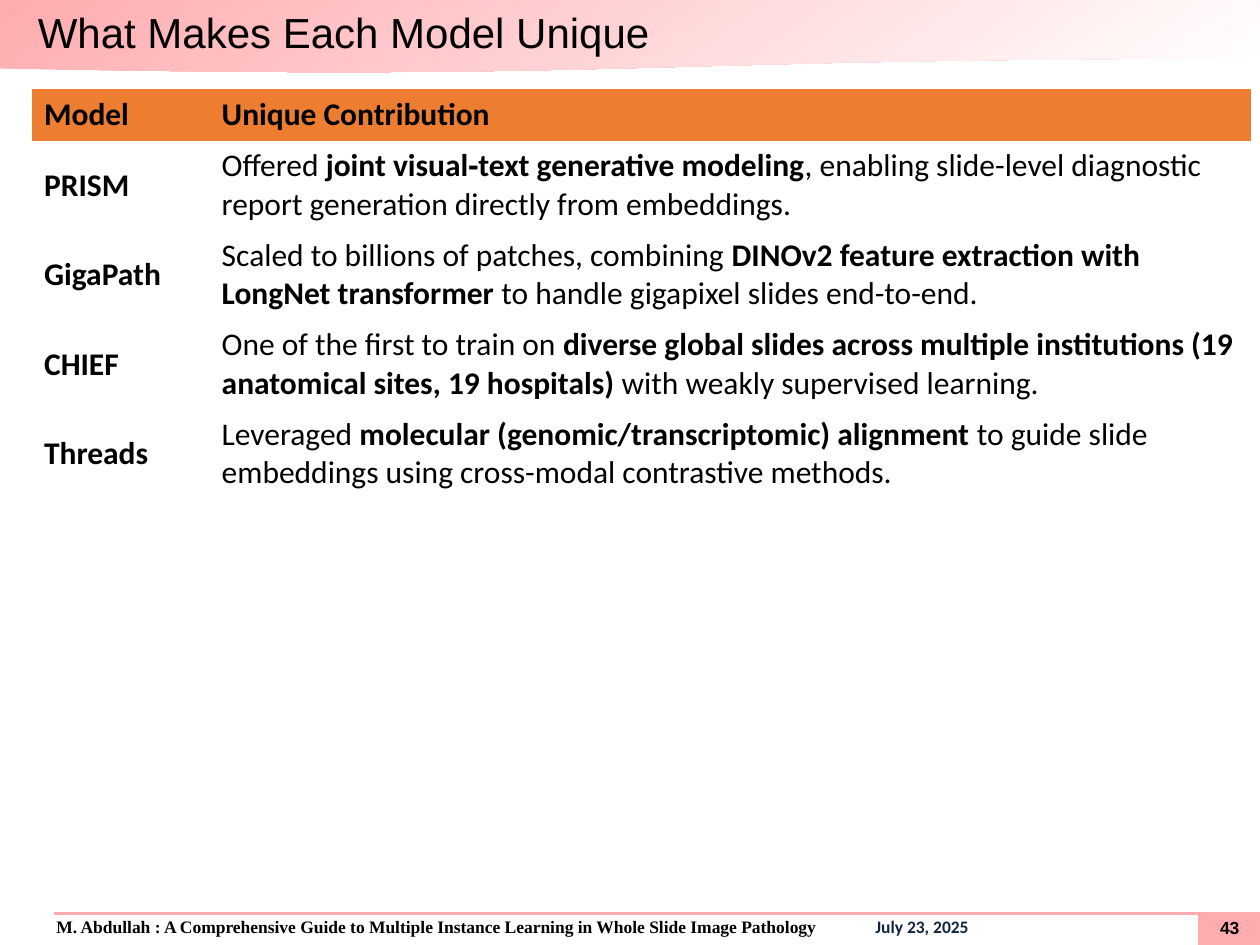
from dataclasses import dataclass

from lxml import etree
from pptx import Presentation
from pptx import util as u
from pptx.dml.color import RGBColor
from pptx.enum import shapes, text
from pptx.oxml.ns import qn

COLS, ROWS = 100, 75
W, H = u.Inches(10), u.Inches(7.5)
PINK, WHITE, BLACK, ORANGE, NAVY = "FFACAF", "FFFFFF", "000000", "ED7D31", "0F243E"
PLAIN_TABLE = "{2D5ABB26-0587-4C30-8999-92F81FD0307C}"


@dataclass
class Box:
    col: float
    row: float
    cols: float
    rows: float

    def emu(self) -> tuple[int, int, int, int]:
        return across(self.col), down(self.row), across(self.cols), down(self.rows)


@dataclass
class Model:
    name: str
    before: str
    key: str
    after: str


MODELS = [
    Model("PRISM", "Offered ", "joint visual‑text generative modeling",
          ", enabling slide-level diagnostic report generation directly from embeddings."),
    Model("GigaPath", "Scaled to billions of patches, combining ",
          "DINOv2 feature extraction with LongNet transformer",
          " to handle gigapixel slides end-to-end."),
    Model("CHIEF", "One of the first to train on ",
          "diverse global slides across multiple institutions (19 anatomical sites, 19 hospitals)",
          " with weakly supervised learning."),
    Model("Threads", "Leveraged ", "molecular (genomic/transcriptomic) alignment",
          " to guide slide embeddings using cross-modal contrastive methods."),
]


def across(cols: float) -> int:
    return round(W * cols / COLS)


def down(rows: float) -> int:
    return round(H * rows / ROWS)


def rgb(value: str) -> RGBColor:
    return RGBColor.from_string(value)


def style(font, size: float, name: str, bold: bool = False, color: str = BLACK) -> None:
    font.size, font.name, font.bold = u.Pt(size), name, bold
    font.color.rgb = rgb(color)


def add_run(p, words: str, size: float, name: str, bold: bool = False, color: str = BLACK) -> None:
    r = p.add_run()
    r.text = words
    style(r.font, size, name, bold, color)


def set_insets(tf, left: float = 0) -> None:
    tf.margin_left = across(left)
    tf.margin_top = tf.margin_right = tf.margin_bottom = 0


def add_block(s, kind, box: Box):
    sp = s.shapes.add_shape(kind, *box.emu())
    sp.shadow.inherit = False
    sp.line.fill.background()
    return sp


def add_band(s) -> None:
    sp = add_block(s, shapes.MSO_SHAPE.FLOWCHART_DOCUMENT, Box(0, 0, 100.1, 5.8))
    sp.fill.gradient()
    sp.fill.gradient_angle = 305
    for stop, color, position in zip(sp.fill.gradient_stops, (PINK, WHITE), (0, 1)):
        stop.color.rgb = rgb(color)
        stop.position = position


def add_footer(s) -> None:
    sp = add_block(s, shapes.MSO_SHAPE.RECTANGLE, Box(95.1, 72.4, 5, 2.6))
    sp.fill.solid()
    sp.fill.fore_color.rgb = rgb(PINK)

    tf = s.shapes.add_textbox(*Box(0.4, 72.3, 99.7, 2.6).emu()).text_frame
    tf.word_wrap = True
    p = tf.paragraphs[0]
    p.line_spacing = 0.95
    pPr = p._p.get_or_add_pPr()
    pPr.set("marL", str(across(3.1)))
    pPr.set("indent", "0")
    tabs = etree.SubElement(pPr, qn("a:tabLst"))
    etree.SubElement(tabs, qn("a:tab"), pos=str(across(73.1)), algn="l")
    add_run(p, "M. Abdullah : A Comprehensive Guide to Multiple Instance Learning "
               "in Whole Slide Image Pathology", 10, "Times New Roman", True)
    add_run(p, "\tJuly 23, 2025", 10, "Calibri", True, NAVY)

    rule = s.shapes.add_connector(shapes.MSO_CONNECTOR.STRAIGHT,
                                  across(4.3), down(72.5), W, down(72.5))
    rule.line.color.rgb = rgb(PINK)
    rule.line.width = u.Pt(1.5)
    etree.SubElement(rule._element.spPr, qn("a:effectLst"))

    tf = s.shapes.add_textbox(*Box(95.6, 72.8, 4, 1.7).emu()).text_frame
    tf.word_wrap = True
    tf.vertical_anchor = text.MSO_ANCHOR.MIDDLE
    set_insets(tf)
    p = tf.paragraphs[0]
    p.alignment = text.PP_ALIGN.CENTER
    add_run(p, "43", 10, "Arial", True)


def add_title(s) -> None:
    title = s.shapes.title
    s.shapes.element.append(title.element)
    title.left, title.top, title.width, title.height = Box(0, 0, 100, 5).emu()
    tf = title.text_frame
    tf.text = "What Makes Each Model Unique"
    tf.word_wrap = False
    tf.vertical_anchor = text.MSO_ANCHOR.MIDDLE
    set_insets(tf, 3)
    p = tf.paragraphs[0]
    p.alignment = text.PP_ALIGN.LEFT
    style(p.runs[0].font, 24, "Arial")


def add_models(s) -> None:
    frame = s.shapes.add_table(len(MODELS) + 2, 2, *Box(2.5, 7.1, 96.8, 36).emu())
    table = frame.table
    table._tbl.tblPr.find(qn("a:tableStyleId")).text = PLAIN_TABLE
    table.horz_banding = False
    for column, cols in zip(table.columns, (14.1, 82.7)):
        column.width = across(cols)
    for row, rows in zip(table.rows, [4] + [7] * len(MODELS) + [4]):
        row.height = down(rows)
    for cell in table.iter_cells():
        cell.vertical_anchor = text.MSO_ANCHOR.MIDDLE
        cell.fill.background()
    for i, heading in enumerate(("Model", "Unique Contribution")):
        cell = table.cell(0, i)
        cell.fill.solid()
        cell.fill.fore_color.rgb = rgb(ORANGE)
        add_run(cell.text_frame.paragraphs[0], heading, 18, "Calibri", True)
    for i, model in enumerate(MODELS, 1):
        name, detail = (table.cell(i, j).text_frame.paragraphs[0] for j in range(2))
        add_run(name, model.name, 18, "Calibri", True)
        for words in (model.before, model.key, model.after):
            add_run(detail, words, 18, "Calibri", words == model.key)


def main() -> None:
    prs = Presentation()
    prs.slide_width, prs.slide_height = W, H
    s = prs.slides.add_slide(prs.slide_layouts[5])
    add_band(s)
    add_footer(s)
    add_title(s)
    add_models(s)
    prs.save("out.pptx")


if __name__ == "__main__":
    main()
